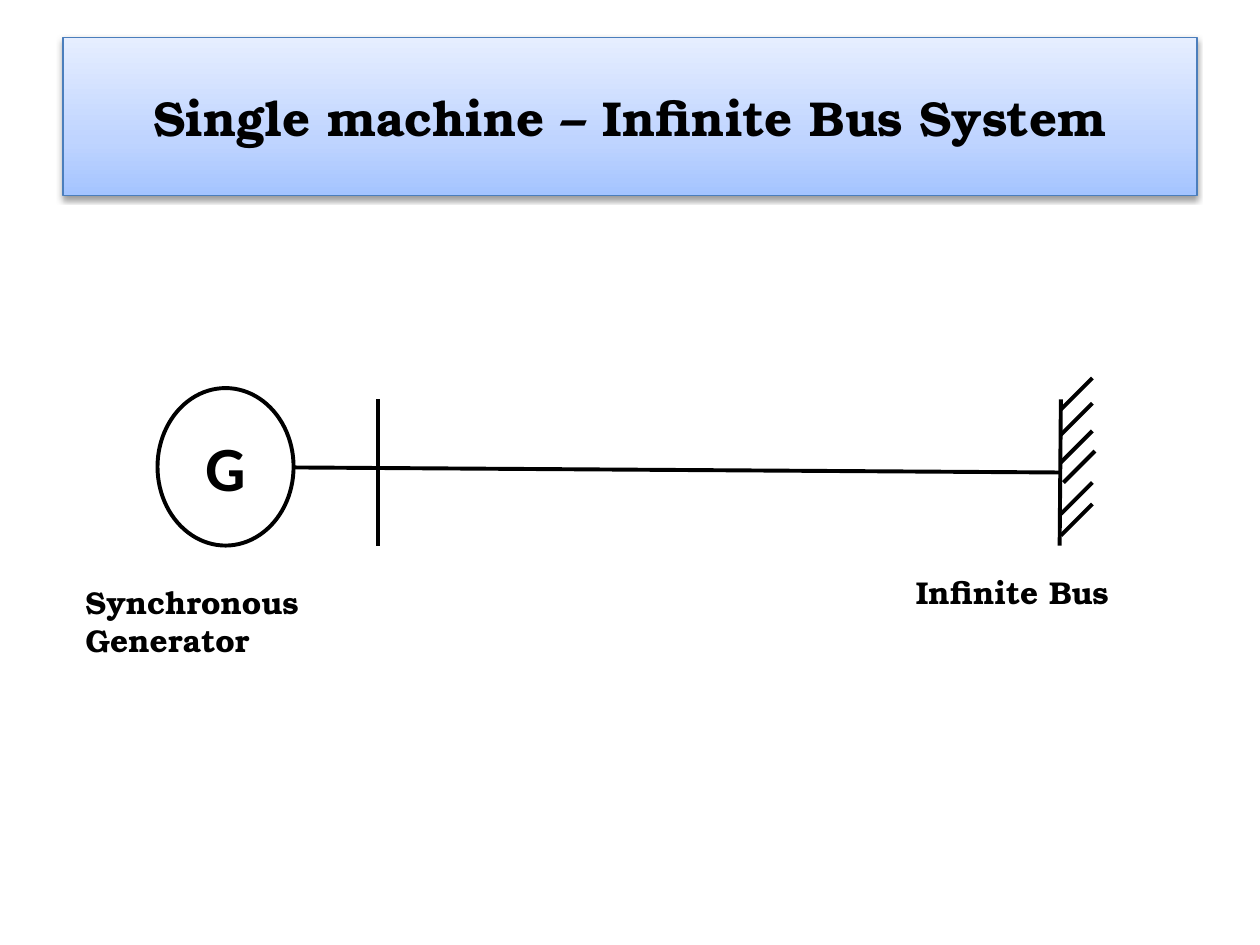
from dataclasses import dataclass

import pptx
import pptx.dml.color
import pptx.enum.shapes
import pptx.enum.text
import pptx.oxml
import pptx.oxml.ns
import pptx.util
from pptx.util import Inches

RGBColor = pptx.dml.color.RGBColor
Align = pptx.enum.text.PP_ALIGN
Anchor = pptx.enum.text.MSO_ANCHOR
ShapeType = pptx.enum.shapes.MSO_SHAPE

BLACK = RGBColor(0x00, 0x00, 0x00)
WHITE = RGBColor(0xFF, 0xFF, 0xFF)
TITLE_BORDER = RGBColor(0x4B, 0x7E, 0xBC)
TITLE_GRADIENT = (
    (0, RGBColor(0xA4, 0xC4, 0xFF)),
    (35, RGBColor(0xBF, 0xD4, 0xFF)),
    (100, RGBColor(0xE6, 0xEE, 0xFF)),
)
SERIF = "TeX Gyre Bonum"
SANS = "Calibri"
LINE_WIDTH = pptx.util.Pt(2.25)
NAMESPACE = pptx.oxml.ns.nsdecls("a")

BUS_X = 8.42
HATCH_SIZE = 0.25
HATCH_STARTS = ((BUS_X, 3.25), (BUS_X, 3.45), (BUS_X, 3.67),
                (8.44, 3.83), (BUS_X, 4.08), (BUS_X, 4.25))


@dataclass
class Line:
    x1: float
    y1: float
    x2: float
    y2: float


@dataclass
class Label:
    text: str
    left: float
    top: float
    width: float
    height: float


LINES = [
    Line(2.33, 3.71, BUS_X, 3.75),   # transmission line
    Line(BUS_X, 3.17, 8.41, 4.33),   # infinite bus
    Line(3, 3.17, 3, 4.33),          # generator bus
] + [Line(x, y, x + HATCH_SIZE, y - HATCH_SIZE) for x, y in HATCH_STARTS]

LABELS = [
    Label("Synchronous Generator", 0.58, 4.58, 2.08, 0.71),
    Label("Infinite Bus", 7.17, 4.5, 2.08, 0.4),
]


def write_text(shape, text: str, *, size: float, font: str = SERIF,
               align=Align.LEFT, anchor=Anchor.TOP) -> None:
    frame = shape.text_frame
    frame.word_wrap = True
    frame.vertical_anchor = anchor
    paragraph = frame.paragraphs[0]
    paragraph.alignment = align
    run = paragraph.add_run()
    run.text = text
    run.font.name = font
    run.font.size = pptx.util.Pt(size)
    run.font.bold = True
    run.font.color.rgb = BLACK


def add_line(slide, line: Line) -> None:
    connector = slide.shapes.add_connector(
        pptx.enum.shapes.MSO_CONNECTOR.STRAIGHT,
        Inches(line.x1), Inches(line.y1), Inches(line.x2), Inches(line.y2))
    connector.line.color.rgb = BLACK
    connector.line.width = LINE_WIDTH
    connector._element.spPr.append(
        pptx.oxml.parse_xml(f"<a:effectLst {NAMESPACE}/>"))


def add_label(slide, label: Label) -> None:
    box = slide.shapes.add_textbox(Inches(label.left), Inches(label.top),
                                   Inches(label.width), Inches(label.height))
    write_text(box, label.text, size=18)


def add_title(slide) -> None:
    title = slide.shapes.add_shape(
        ShapeType.RECTANGLE, Inches(0.5), Inches(0.3), Inches(9), Inches(1.25))
    title.line.color.rgb = TITLE_BORDER
    title.line.width = pptx.util.Pt(0.75)

    # Three-stop gradient running upwards
    title.fill.gradient()
    title.fill.gradient_angle = 90
    properties = title._element.spPr
    stops = "".join(
        f'<a:gs pos="{position * 1000}"><a:srgbClr val="{color}"/></a:gs>'
        for position, color in TITLE_GRADIENT)
    stop_list = properties.find(".//" + pptx.oxml.ns.qn("a:gsLst"))
    stop_list.getparent().replace(stop_list, pptx.oxml.parse_xml(
        f"<a:gsLst {NAMESPACE}>{stops}</a:gsLst>"))

    # Soft shadow below the banner
    blur, distance = pptx.util.Pt(3.1), pptx.util.Pt(1.6)
    properties.append(pptx.oxml.parse_xml(
        f'<a:effectLst {NAMESPACE}><a:outerShdw blurRad="{blur}" '
        f'dist="{distance}" dir="5400000" rotWithShape="0">'
        f'<a:srgbClr val="{BLACK}"><a:alpha val="38000"/></a:srgbClr>'
        '</a:outerShdw></a:effectLst>'))
    write_text(title, "Single machine – Infinite Bus System", size=28,
               align=Align.CENTER, anchor=Anchor.MIDDLE)


def add_generator(slide) -> None:
    generator = slide.shapes.add_shape(
        ShapeType.OVAL, Inches(1.25), Inches(3.08), Inches(1.08), Inches(1.25))
    generator.shadow.inherit = False
    generator.fill.solid()
    generator.fill.fore_color.rgb = WHITE
    generator.line.color.rgb = BLACK
    generator.line.width = LINE_WIDTH
    write_text(generator, "G", size=36, font=SANS,
               align=Align.CENTER, anchor=Anchor.MIDDLE)


def main() -> None:
    presentation = pptx.Presentation()
    presentation.slide_width = Inches(10)
    presentation.slide_height = Inches(7.5)
    slide = presentation.slides.add_slide(presentation.slide_layouts[6])

    add_title(slide)

    # Circuit diagram
    add_generator(slide)
    for line in LINES:
        add_line(slide, line)
    for label in LABELS:
        add_label(slide, label)

    presentation.save("out.pptx")


if __name__ == "__main__":
    main()
